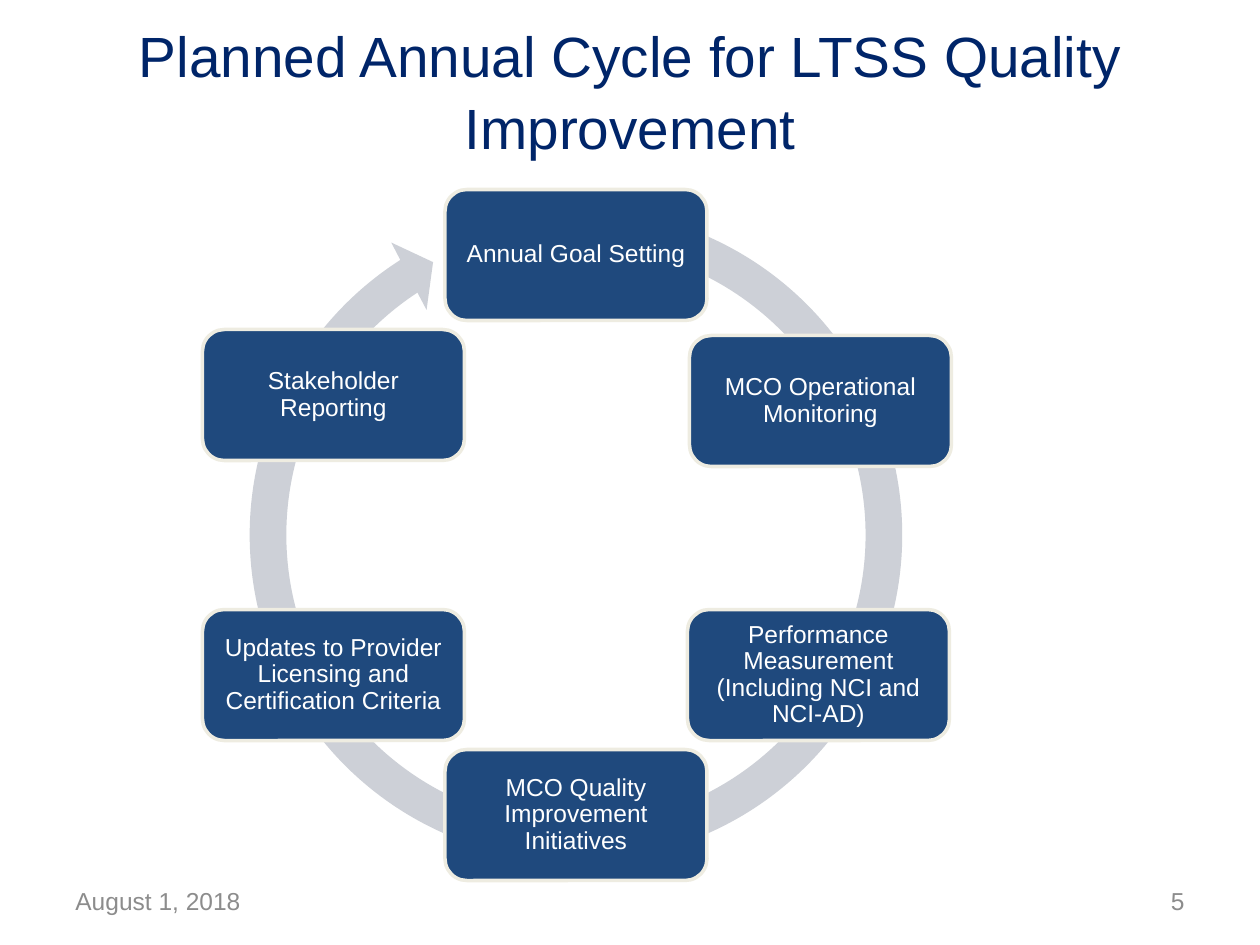
import math

import pptx
import pptx.util
from pptx.dml.color import RGBColor
from pptx.enum.shapes import MSO_SHAPE
from pptx.enum.text import MSO_ANCHOR, MSO_AUTO_SIZE, PP_ALIGN

SCALE = 914400 / 126
FONT = "Arial"
NAVY, BLUE, CREAM = "002569", "1F497D", "EEECE1"
RING, GRAY, WHITE = "CDD0D7", "8C8C8C", "FFFFFF"

# Cycle geometry in px
MID_X, MID_Y, RADIUS = 576, 535, 280
BOX_W, BOX_H = 262, 131
RING_SIZE = 692

# Step text and its shift from the even place on the circle
STEPS = [
    ("Annual Goal Setting", 0, 0),
    ("MCO Operational Monitoring", 2, 6),
    ("Performance Measurement (Including NCI and NCI-AD)", 0, 0),
    ("MCO Quality Improvement Initiatives", 0, 0),
    ("Updates to Provider Licensing and Certification Criteria", 0, 0),
    ("Stakeholder Reporting", 0, 0),
]


def px(count):
    return pptx.util.Emu(round(count * SCALE))


def color(code):
    return RGBColor.from_string(code)


def write(shape, text, size, code, align, space=1.0):
    frame = shape.text_frame
    frame.text = text
    frame.word_wrap = True
    frame.auto_size = MSO_AUTO_SIZE.NONE
    frame.vertical_anchor = MSO_ANCHOR.MIDDLE
    para = frame.paragraphs[0]
    para.alignment = align
    para.line_spacing = space
    font = para.runs[0].font
    font.name = FONT
    font.size = pptx.util.Pt(size)
    font.color.rgb = color(code)


def add_title(slide, text):
    title = slide.shapes.title
    title.left, title.top = px(87), px(34)
    title.width, title.height = px(1086), px(110)
    write(title, text, 32.4, NAVY, PP_ALIGN.CENTER, 1.05)


def add_solid(slide, kind, left, top, width, height, fill):
    shape = slide.shapes.add_shape(kind, px(left), px(top), px(width), px(height))
    shape.shadow.inherit = False
    shape.fill.solid()
    shape.fill.fore_color.rgb = color(fill)
    return shape


def add_ring(slide):
    half = RING_SIZE / 2
    ring = add_solid(slide, MSO_SHAPE.CIRCULAR_ARROW, MID_X - half, MID_Y - half,
                     RING_SIZE, RING_SIZE, RING)
    ring.line.fill.background()
    # Band width, head angle, end angle, start angle, head width
    for index, value in enumerate([0.053, 3.126, 142.287, 171.267, 0.055]):
        ring.adjustments[index] = value


def add_step(slide, index, text, shift_x, shift_y):
    angle = math.radians(360 / len(STEPS) * index)
    left = MID_X + RADIUS * math.sin(angle) - BOX_W / 2 + shift_x
    top = MID_Y - RADIUS * math.cos(angle) - BOX_H / 2 + shift_y
    box = add_solid(slide, MSO_SHAPE.ROUNDED_RECTANGLE, left, top, BOX_W, BOX_H, BLUE)
    box.line.color.rgb = color(CREAM)
    box.line.width = pptx.util.Pt(2)
    write(box, text, 14, WHITE, PP_ALIGN.CENTER, 0.9)
    frame = box.text_frame
    frame.margin_left = frame.margin_right = px(8)
    frame.margin_top = frame.margin_bottom = px(8)


def add_note(slide, left, text, align):
    note = slide.shapes.add_textbox(px(left), px(876), px(294), px(50))
    write(note, text, 14, GRAY, align)


def main():
    deck = pptx.Presentation()
    deck.slide_width, deck.slide_height = px(1260), px(945)
    slide = deck.slides.add_slide(deck.slide_layouts[5])

    add_title(slide, "Planned Annual Cycle for LTSS Quality Improvement")

    # Cycle
    add_ring(slide)
    for index, (text, shift_x, shift_y) in enumerate(STEPS):
        add_step(slide, index, text, shift_x, shift_y)

    # Footer
    add_note(slide, 903, "5", PP_ALIGN.RIGHT)
    add_note(slide, 63, "August 1, 2018", PP_ALIGN.LEFT)

    deck.save("out.pptx")


if __name__ == "__main__":
    main()
